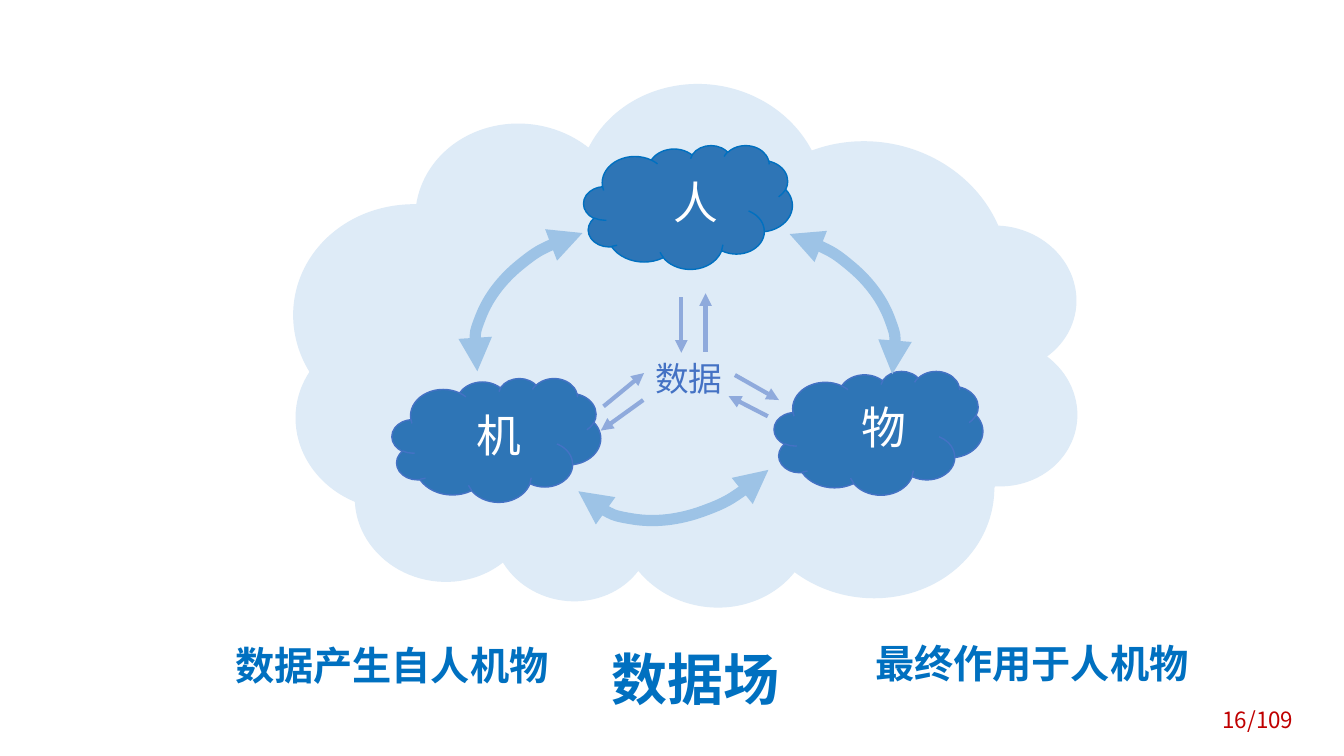
from collections import namedtuple

from lxml import etree
from pptx import Presentation
from pptx.dml.color import RGBColor
from pptx.enum.shapes import MSO_CONNECTOR as Line, MSO_SHAPE as Preset
from pptx.enum.text import MSO_ANCHOR as Anchor, PP_ALIGN as Align
from pptx.oxml.ns import qn
from pptx.util import Cm, Pt

COLORS = {
    "field": "DEEBF7", "cloud": "2E75B6", "strong": "0070C0", "edge": "4472C4",
    "arc": "9DC3E6", "arrow": "8FAADC", "white": "FFFFFF", "page": "C00000",
}
SANS, SANS_JP = "Noto Sans CJK SC", "Noto Sans CJK JP"

# All four lengths are centimetres.
Box = namedtuple("Box", "left top width height")


def color(name):
    return RGBColor.from_string(COLORS[name])


def within(outer, left, top, width, height):
    """Box whose position is given relative to the outer box."""
    return Box(outer.left + left, outer.top + top, width, height)


def write(frame, text, size, ink, font=SANS, bold=False, align=Align.CENTER):
    frame.text = text
    para = frame.paragraphs[0]
    para.alignment = align
    span = para.runs[0]
    span.font.size = Pt(size)
    span.font.bold = bold
    span.font.name = font
    span.font.color.rgb = color(ink)
    etree.SubElement(span._r.get_or_add_rPr(), qn("a:ea"), typeface=font)
    return para


def add_label(page, box, text, size, ink, wrap=False, **style):
    frame = page.shapes.add_textbox(*map(Cm, box)).text_frame
    frame.word_wrap = wrap
    para = write(frame, text, size, ink, **style)
    return frame, para


def add_preset(page, preset, box, fill=None, edge=None, width=1, rotation=0):
    shape = page.shapes.add_shape(preset, *map(Cm, box))
    shape.shadow.inherit = False
    shape.rotation = rotation
    if fill:
        shape.fill.solid()
        shape.fill.fore_color.rgb = color(fill)
    else:
        shape.fill.background()
    if edge:
        shape.line.color.rgb = color(edge)
        shape.line.width = Pt(width)
    else:
        shape.line.fill.background()
    return shape


def add_heads(shape, *ends):
    outline = shape.line._get_or_add_ln()
    for end in ends:
        etree.SubElement(outline, qn(f"a:{end}"), type="triangle")


def add_party(page, box, text, edge, label_left):
    add_preset(page, Preset.CLOUD, box, "cloud", edge)
    add_label(page, within(box, label_left, 0.61, 1.65, 1.63),
              text, 32, "white", font=SANS_JP)


def add_data_hub(page, box):
    """Central word with a pair of opposite arrows towards each party."""
    hub = add_preset(page, Preset.OVAL, box)
    frame = hub.text_frame
    frame.margin_left = frame.margin_right = 0
    frame.vertical_anchor = Anchor.MIDDLE
    write(frame, "数据", 24, "edge")
    arrows = [
        (1.24, -0.61, 1.24, 0.79), (1.85, 0.76, 1.85, -0.71),
        (3.42, 2.39, 2.43, 1.88), (2.59, 1.35, 3.7, 1.98),
        (-0.72, 2.14, 0.3, 1.3), (0.28, 1.98, -0.79, 2.75),
    ]
    for x1, y1, x2, y2 in arrows:
        arrow = page.shapes.add_connector(
            Line.STRAIGHT, Cm(box.left + x1), Cm(box.top + y1),
            Cm(box.left + x2), Cm(box.top + y2))
        arrow.line.color.rgb = color("arrow")
        arrow.line.width = Pt(3)
        add_heads(arrow, "tailEnd")
        etree.SubElement(arrow._element.spPr, qn("a:effectLst"))


def add_data_field(page, box):
    add_preset(page, Preset.CLOUD, box, "field", rotation=188.5)
    parties = [
        ("人", 7.37, 1.5, "strong", 2),
        ("机", 2.54, 7.37, "edge", 1.88),
        ("物", 12.17, 7.19, "edge", 1.93),
    ]
    for text, left, top, edge, label_left in parties:
        add_party(page, within(box, left, top, 5.26, 3.12), text, edge, label_left)
    arcs = [
        (8.33, 3.63, 6.96, 5.31, 16.4),
        (6.17, 4.65, 7.67, 5.84, 136.3),
        (5.39, 2.79, 5.31, 6.96, 254.6),
    ]
    for *place, rotation in arcs:
        arc = add_preset(page, Preset.ARC, within(box, *place),
                         edge="arc", width=8, rotation=rotation)
        add_heads(arc, "headEnd", "tailEnd")
    add_data_hub(page, within(box, 8.59, 5.94, 2.87, 2.87))


def add_captions(page, box):
    for text, left, top in [("数据产生自人机物", 0, 0.66),
                            ("最终作用于人机物", 16.13, 0.61)]:
        add_label(page, within(box, left, top, 9.09, 1.45),
                  text, 28, "strong", wrap=True, bold=True)
    frame, para = add_label(page, within(box, 9.2, 0, 5.99, box.height),
                            "数据场", 40, "strong", wrap=True, bold=True)
    frame.margin_left = frame.margin_right = frame.margin_bottom = 0
    frame.margin_top = Cm(0.03)
    para.line_spacing = 1.5


def main():
    deck = Presentation()
    deck.slide_width, deck.slide_height = Cm(33.87), Cm(19.05)
    page = deck.slides.add_slide(deck.slide_layouts[6])
    add_label(page, Box(30.56, 17.68, 2.31, 0.91), "16/109", 16, "page",
              align=Align.LEFT)
    add_data_field(page, Box(7.34, 2.16, 19.94, 13.41))
    add_captions(page, Box(5.33, 15.37, 25.22, 2.51))
    deck.save("out.pptx")


if __name__ == "__main__":
    main()
